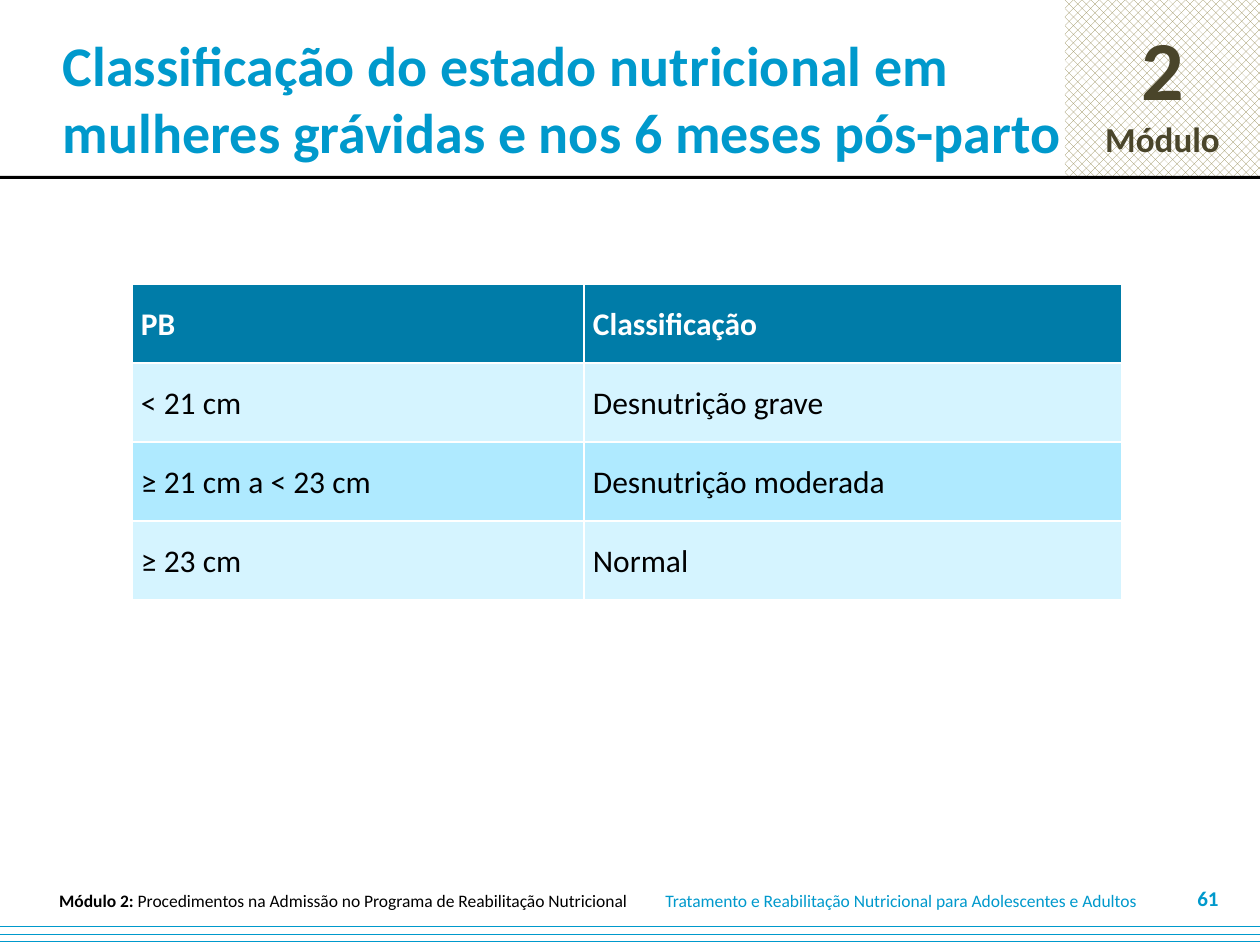
from pptx import Presentation
from pptx.dml.color import RGBColor
from pptx.enum.dml import MSO_PATTERN as Pat
from pptx.enum.shapes import MSO_SHAPE as Shape
from pptx.enum.text import MSO_ANCHOR as Anchor, PP_ALIGN as Align
from pptx.oxml import parse_xml
from pptx.oxml.ns import nsdecls
from pptx.util import Emu, Pt

SCALE = 914400 / 126
FONT = "Calibri"
WHITE = RGBColor(0xFF, 0xFF, 0xFF)
BLACK = RGBColor(0, 0, 0)
BLUE = RGBColor(0x00, 0x99, 0xCC)
TEAL = RGBColor(0x00, 0x7C, 0xA8)
PALE = RGBColor(0xD5, 0xF4, 0xFF)
SKY = RGBColor(0xAF, 0xEA, 0xFF)
KHAKI = RGBColor(0x94, 0x8A, 0x54)
OLIVE = RGBColor(0x4A, 0x45, 0x2A)

ROWS = [
    ("PB", "Classificação"),
    ("< 21 cm", "Desnutrição grave"),
    ("≥ 21 cm a < 23 cm", "Desnutrição moderada"),
    ("≥ 23 cm", "Normal"),
]
COLS = (452, 538)
ROW_H = 79


def px(n):
    return Emu(round(n * SCALE))


def style(run, size, color, bold=False):
    font = run.font
    font.name = FONT
    font.size = Pt(size)
    font.bold = bold
    font.color.rgb = color


def add_bar(slide, box, color, pattern=None):
    bar = slide.shapes.add_shape(Shape.RECTANGLE, *map(px, box))
    bar.shadow.inherit = False
    bar.line.fill.background()
    if pattern is None:
        bar.fill.solid()
        bar.fill.fore_color.rgb = color
    else:
        bar.fill.patterned()
        bar.fill.pattern = pattern
        bar.fill.fore_color.rgb = color
        bar.fill.back_color.rgb = WHITE
    return bar


def add_badge(slide):
    badge = add_bar(slide, (1065, 0, 195, 176), KHAKI, Pat.PERCENT_50)
    frame = badge.text_frame
    frame.text = "2\nMódulo"
    frame.vertical_anchor = Anchor.MIDDLE
    for para, size in zip(frame.paragraphs, (48, 20)):
        para.alignment = Align.CENTER
        style(para.runs[0], size, OLIVE, True)


def add_text(slide, box, parts, size, color, align=Align.LEFT, wrap=True):
    frame = slide.shapes.add_textbox(*map(px, box)).text_frame
    frame.word_wrap = wrap
    frame.vertical_anchor = Anchor.MIDDLE
    para = frame.paragraphs[0]
    para.alignment = align
    for text, bold in parts:
        run = para.add_run()
        run.text = text
        style(run, size, color, bold)
    return frame


def add_edges(cell):
    props = cell._tc.get_or_add_tcPr()
    for i, side in enumerate("LRTB"):
        props.insert(i, parse_xml(
            f'<a:ln{side} {nsdecls("a")} w="12700"><a:solidFill>'
            f'<a:srgbClr val="{WHITE}"/></a:solidFill></a:ln{side}>'))


def fill_cell(cell, text, row):
    cell.fill.solid()
    cell.fill.fore_color.rgb = TEAL if row == 0 else (SKY, PALE)[row % 2]
    add_edges(cell)
    cell.vertical_anchor = Anchor.MIDDLE
    cell.margin_left = cell.margin_right = px(9)
    cell.margin_top = cell.margin_bottom = 0
    para = cell.text_frame.paragraphs[0]
    para.text = text
    para.alignment = Align.JUSTIFY
    para.line_spacing = 1.05
    para.space_before = para.space_after = Pt(3)
    style(para.runs[0], 18, BLACK if row else WHITE, row == 0)


def add_grid(slide):
    box = (132, 284, sum(COLS), ROW_H * len(ROWS))
    grid = slide.shapes.add_table(len(ROWS), len(COLS), *map(px, box)).table
    for col, width in zip(grid.columns, COLS):
        col.width = px(width)
    for r, texts in enumerate(ROWS):
        grid.rows[r].height = px(ROW_H)
        for c, text in enumerate(texts):
            fill_cell(grid.cell(r, c), text, r)


def main():
    deck = Presentation()
    deck.slide_width, deck.slide_height = px(1260), px(945)
    slide = deck.slides.add_slide(deck.slide_layouts[6])

    add_badge(slide)
    add_bar(slide, (-2, 176, 1262, 3), BLACK)
    add_bar(slide, (0, 919, 1260, 26), BLUE, Pat.DASHED_HORIZONTAL)

    add_text(slide, (653, 888, 510, 25),
             [("Tratamento e Reabilitação Nutricional para Adolescentes e Adultos", False)],
             10, BLUE, wrap=False)
    add_text(slide, (37, 888, 612, 25),
             [("Módulo 2: ", True),
              ("Procedimentos na Admissão no Programa de Reabilitação Nutricional", False)],
             10, BLACK, Align.CENTER, wrap=False)
    title = add_text(slide, (0, 0, 1081, 195),
                     [("Classificação do estado nutricional em "
                       "mulheres grávidas e nos 6 meses pós-parto", True)],
                     32, BLUE)
    title.margin_left = px(63)
    add_text(slide, (1168, 882, 63, 32), [("61", True)], 12, BLUE, Align.RIGHT)
    add_grid(slide)

    deck.save("out.pptx")


if __name__ == "__main__":
    main()
